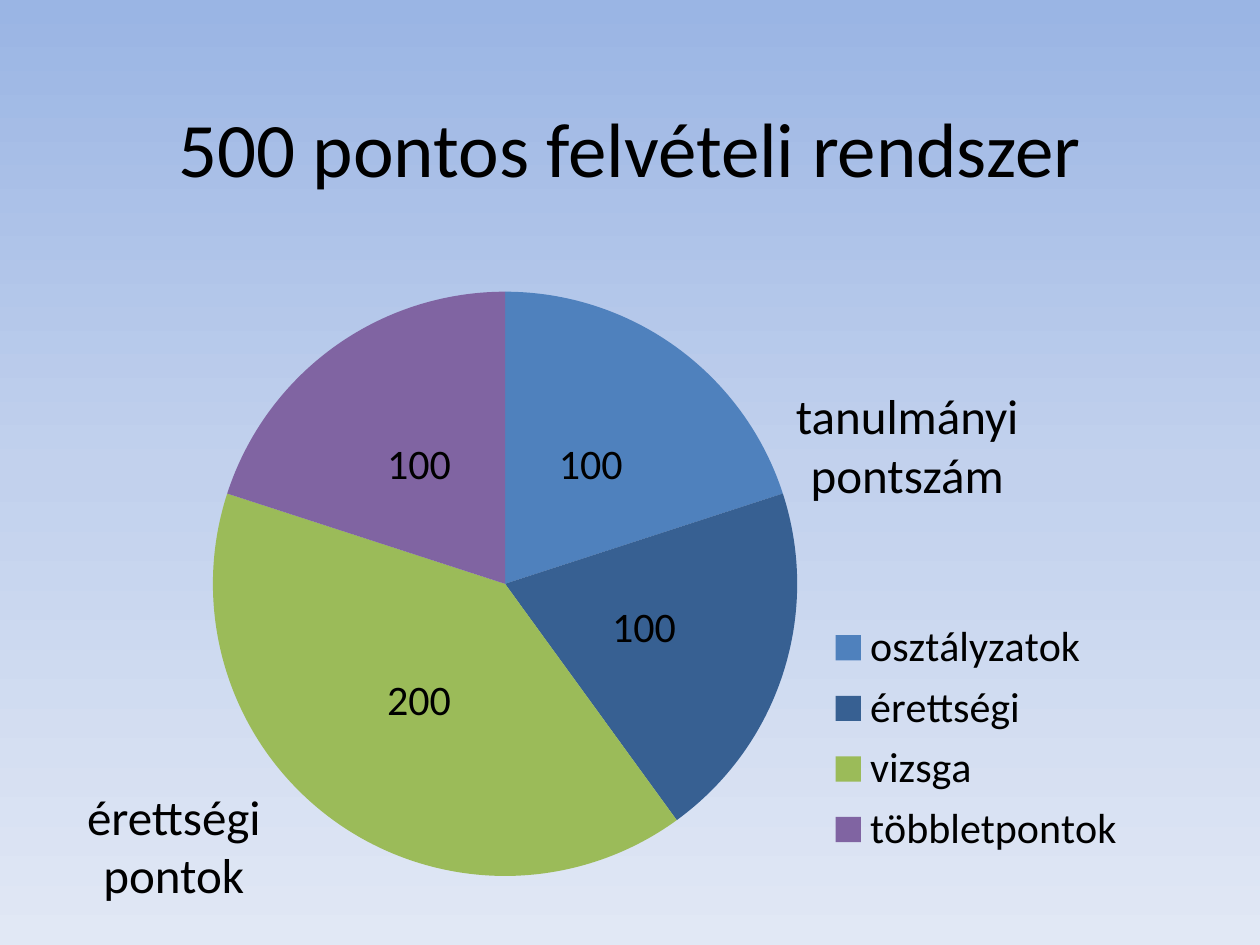
from copy import deepcopy

from lxml import etree
from pptx import Presentation
from pptx.chart import data
from pptx.dml.color import RGBColor
from pptx.enum import chart as charts, text
from pptx.oxml.ns import qn
from pptx.util import Inches, Pt

FONT = "Calibri"
BLACK = RGBColor(0x00, 0x00, 0x00)
SKY_STOPS = [
    (0, RGBColor(0x9A, 0xB5, 0xE4)),
    (0.5, RGBColor(0xC2, 0xD1, 0xED)),
    (1, RGBColor(0xE1, 0xE8, 0xF5)),
]
SCORES = [
    ("osztályzatok", 100, RGBColor(0x4F, 0x81, 0xBD)),
    ("érettségi", 100, RGBColor(0x37, 0x60, 0x92)),
    ("vizsga", 200, RGBColor(0x9B, 0xBB, 0x59)),
    ("többletpontok", 100, RGBColor(0x80, 0x64, 0xA2)),
]


def style_font(font, size):
    """Set the common typeface and colour at the given size."""
    font.name = FONT
    font.size = Pt(size)
    font.color.rgb = BLACK


def paint_background(slide):
    """Fill the slide with a three-stop gradient from top to bottom."""
    fill = slide.background.fill
    fill.gradient()
    fill.gradient_angle = 270
    first = fill.gradient_stops[0]._gs
    first.addnext(deepcopy(first))
    for stop, (position, color) in zip(fill.gradient_stops, SKY_STOPS):
        stop.position = position
        stop.color.rgb = color


def add_label(slide, box, words, size, anchor=text.MSO_ANCHOR.TOP):
    """Place centred, wrapping text in the box."""
    tf = slide.shapes.add_textbox(*map(Inches, box)).text_frame
    tf.word_wrap = True
    tf.vertical_anchor = anchor
    p = tf.paragraphs[0]
    p.alignment = text.PP_ALIGN.CENTER
    r = p.add_run()
    r.text = words
    style_font(r.font, size)


def set_layout(parent, index, box, inner=False):
    """Give a chart part a manual position in fractions of the chart."""
    for old in parent.findall(qn("c:layout")):
        parent.remove(old)
    layout = etree.Element(qn("c:layout"))
    manual = etree.SubElement(layout, qn("c:manualLayout"))
    settings = [("layoutTarget", "inner")] if inner else []
    settings += [("xMode", "edge"), ("yMode", "edge"), *zip("xywh", box)]
    for tag, value in settings:
        etree.SubElement(manual, qn(f"c:{tag}")).set("val", str(value))
    parent.insert(index, layout)


def add_score_pie(slide, box):
    """Place the pie of scores with its value labels and legend in the box."""
    chart_data = data.CategoryChartData()
    chart_data.categories = [name for name, _, _ in SCORES]
    chart_data.add_series("Series 1", [value for _, value, _ in SCORES])
    chart = slide.shapes.add_chart(
        charts.XL_CHART_TYPE.PIE, *map(Inches, box), chart_data
    ).chart
    style_font(chart.font, 10)
    chart.has_title = False
    plot = chart.plots[0]
    plot.vary_by_categories = True
    for i, (_, _, color) in enumerate(SCORES):
        fill = plot.series[0].points[i].format.fill
        fill.solid()
        fill.fore_color.rgb = color

    plot.has_data_labels = True
    labels = plot.data_labels
    labels.show_value = True
    labels.show_percentage = False
    labels.position = charts.XL_LABEL_POSITION.CENTER
    style_font(labels.font, 24)

    chart.has_legend = True
    legend = chart.legend
    legend.position = charts.XL_LEGEND_POSITION.RIGHT
    legend.include_in_layout = False
    style_font(legend.font, 24)
    set_layout(legend._element, 1, (0.67, 0.54, 0.32, 0.39))
    set_layout(chart._chartSpace.chart.plotArea, 0, (0.02, 0.04, 0.62, 0.91), True)


def main():
    """Build the slide and save it."""
    prs = Presentation()
    prs.slide_width, prs.slide_height = Inches(10), Inches(7.5)
    s = prs.slides.add_slide(prs.slide_layouts[6])
    paint_background(s)
    add_label(s, (0.75, 0.36, 8.5, 1.61), "500 pontos felvételi rendszer", 44,
              text.MSO_ANCHOR.MIDDLE)
    add_score_pie(s, (1.54, 2.1, 7.48, 5.12))
    add_label(s, (6.02, 3.01, 2.36, 1.04), "tanulmányi pontszám", 28)
    add_label(s, (0.2, 6.19, 2.36, 1.04), "érettségi pontok", 28)
    prs.save("out.pptx")


if __name__ == "__main__":
    main()
